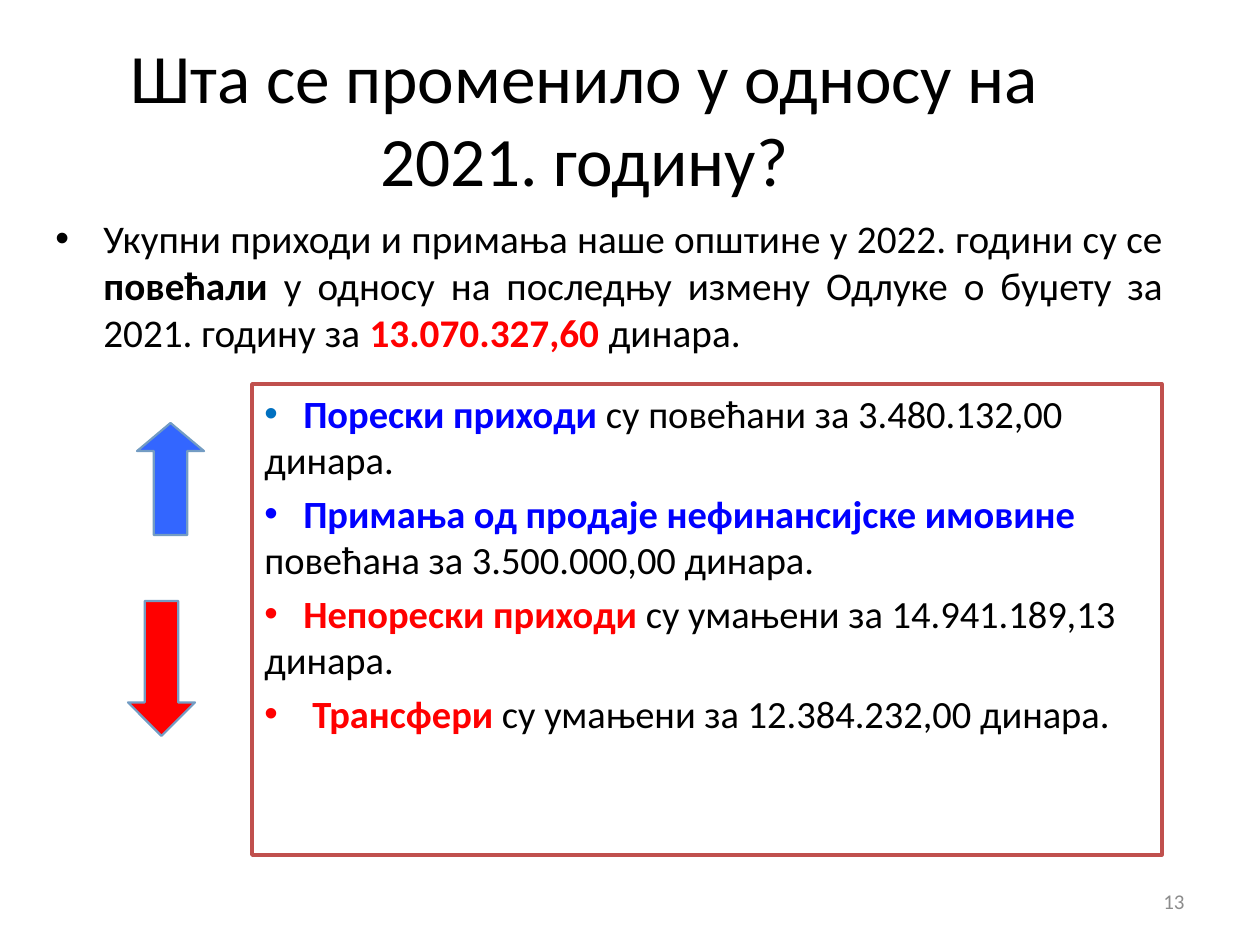
from lxml.etree import SubElement
from pptx import Presentation
from pptx.dml.color import RGBColor
from pptx.enum.shapes import MSO_SHAPE
from pptx.enum.text import MSO_ANCHOR, PP_ALIGN
from pptx.oxml.ns import qn
from pptx.util import Pt

SCALE = 914400 / 126
BLACK = RGBColor(0x00, 0x00, 0x00)
GRAY = RGBColor(0x8C, 0x8C, 0x8C)
RED = RGBColor(0xFF, 0x00, 0x00)
BLUE = RGBColor(0x00, 0x00, 0xFF)
SKY = RGBColor(0x33, 0x66, 0xFF)
STEEL = RGBColor(0x73, 0x9C, 0xC3)
BRICK = RGBColor(0xC0, 0x50, 0x4D)
DOT = RGBColor(0x00, 0x70, 0xC0)
HANG = 48
GAP = 39


def px(num):
    return round(num * SCALE)


def add_box(slide, area, anchor=MSO_ANCHOR.TOP):
    box = slide.shapes.add_textbox(*map(px, area))
    box.text_frame.word_wrap = True
    box.text_frame.vertical_anchor = anchor
    return box


def fill_para(para, runs, size, align=PP_ALIGN.LEFT):
    """Each run is (text, colour, bold)."""
    para.alignment = align
    para.font.size = Pt(size)
    para.font.name = "Calibri"
    for text, color, bold in runs:
        run = para.add_run()
        run.text = text
        run.font.color.rgb = color
        run.font.bold = bold


def add_bullet(para, color, hang=0, tab=0):
    para.space_before = Pt(4.4)
    props = para._p.get_or_add_pPr()
    props.set("marL", str(px(hang)))
    props.set("indent", str(-px(hang)))
    tint = SubElement(SubElement(props, qn("a:buClr")), qn("a:srgbClr"))
    tint.set("val", str(color))
    SubElement(props, qn("a:buFont")).set("typeface", "Arial")
    SubElement(props, qn("a:buChar")).set("char", "•")
    if tab:
        stop = SubElement(SubElement(props, qn("a:tabLst")), qn("a:tab"))
        stop.set("pos", str(px(tab)))
        stop.set("algn", "l")


def add_arrow(slide, kind, area, color, head):
    arrow = slide.shapes.add_shape(kind, *map(px, area))
    arrow.shadow.inherit = False
    arrow.adjustments[1] = head
    arrow.fill.solid()
    arrow.fill.fore_color.rgb = color
    arrow.line.color.rgb = STEEL
    arrow.line.width = Pt(1.25)


def add_changes(slide):
    box = add_box(slide, (252, 384, 910, 471))
    box.line.color.rgb = BRICK
    box.line.width = Pt(2)
    items = [
        ("Порески приходи ", "су повећани за 3.480.132,00 динара.", BLUE, DOT),
        ("Примања од продаје нефинансијске имовине ",
         "повећана за 3.500.000,00 динара.", BLUE, BLUE),
        ("Непорески приходи ", "су умањени за 14.941.189,13 динара.", RED, RED),
        ("Трансфери", " су умањени за 12.384.232,00 динара.", RED, RED),
    ]
    frame = box.text_frame
    for num, (name, rest, color, dot) in enumerate(items):
        para = frame.add_paragraph() if num else frame.paragraphs[0]
        last = num == len(items) - 1
        lead = name if last else "\t" + name
        fill_para(para, [(lead, color, True), (rest, BLACK, False)], 22)
        if last:
            add_bullet(para, dot, hang=HANG)
        else:
            add_bullet(para, dot, tab=GAP)


def main():
    deck = Presentation()
    deck.slide_width, deck.slide_height = px(1260), px(945)
    slide = deck.slides.add_slide(deck.slide_layouts[6])

    # Title
    title = add_box(slide, (35, 38, 1099, 158), MSO_ANCHOR.MIDDLE)
    fill_para(title.text_frame.paragraphs[0],
              [("Шта се променило у односу на 2021. годину?", BLACK, False)],
              39.6, PP_ALIGN.CENTER)

    # Summary
    para = add_box(slide, (43, 208, 1134, 156)).text_frame.paragraphs[0]
    fill_para(para, [
        ("Укупни приходи и примања наше општине у 2022. години су се ", BLACK, False),
        ("повећали ", BLACK, True),
        ("у односу на последњу измену Одлуке о буџету за 2021. годину за ",
         BLACK, False),
        ("13.070.327,60 ", RED, True),
        ("динара.", BLACK, False),
    ], 22.4, PP_ALIGN.JUSTIFY)
    add_bullet(para, BLACK, hang=HANG)

    # Changes and their arrows
    add_changes(slide)
    add_arrow(slide, MSO_SHAPE.UP_ARROW, (137, 423, 67, 112), SKY, 0.42)
    add_arrow(slide, MSO_SHAPE.DOWN_ARROW, (128, 601, 67, 135), RED, 0.5)

    # Page number
    page = add_box(slide, (903, 876, 294, 50), MSO_ANCHOR.MIDDLE)
    fill_para(page.text_frame.paragraphs[0], [("13", GRAY, False)], 12,
              PP_ALIGN.RIGHT)
    deck.save("out.pptx")


if __name__ == "__main__":
    main()
